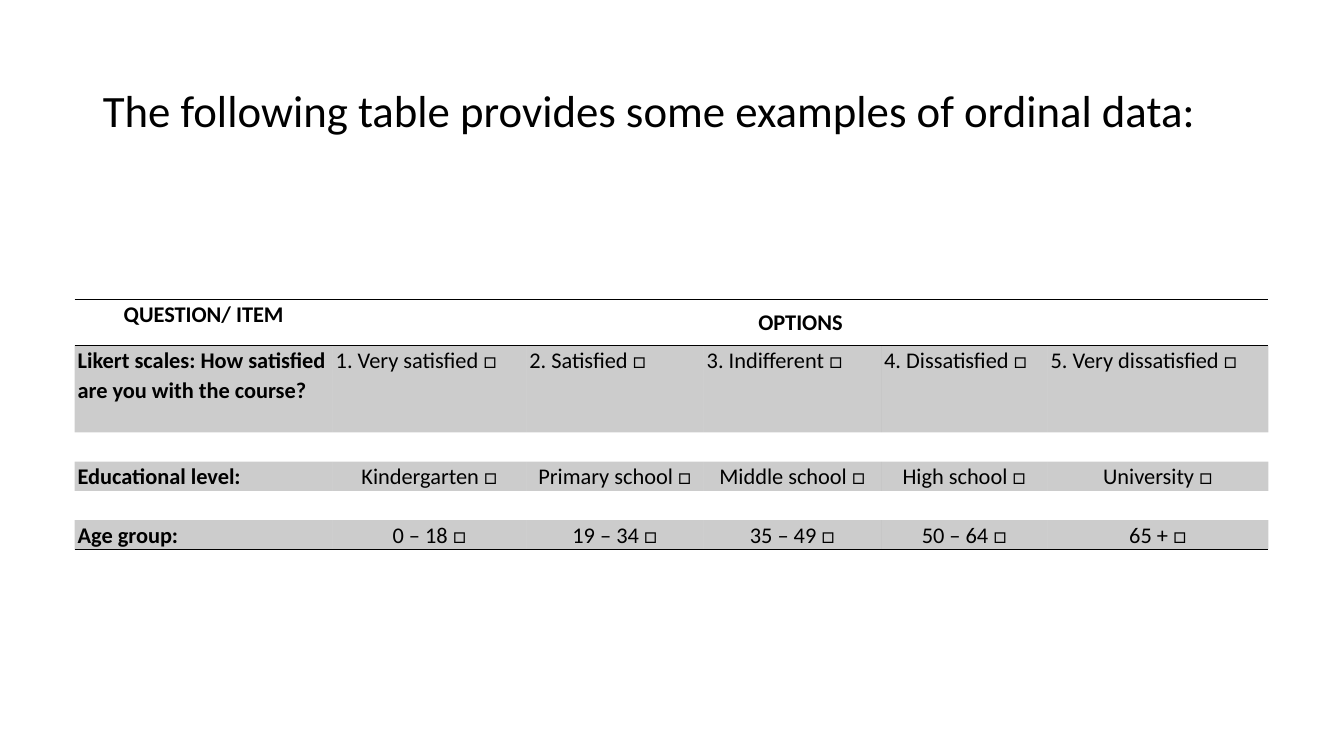
from dataclasses import dataclass

from lxml.etree import SubElement
from pptx import Presentation
from pptx.dml.color import RGBColor
from pptx.enum.text import MSO_ANCHOR, MSO_AUTO_SIZE, PP_ALIGN
from pptx.oxml.ns import qn
from pptx.util import Inches, Pt


@dataclass(frozen=True)
class Theme:
    font: str = "Calibri"
    ink: RGBColor = RGBColor(0, 0, 0)
    title_size: Pt = Pt(32)
    table_size: Pt = Pt(16)
    rule_width: Pt = Pt(1)
    shade_alpha: str = "20000"
    plain_table_style: str = "{2D5ABB26-0587-4C30-8999-92F81FD0307C}"


THEME = Theme()
COLUMN_WIDTHS = [2.56, 1.92, 1.76, 1.76, 1.65, 2.19]
ROW_HEIGHTS = [0.46, 0.86, 0.29, 0.29, 0.29, 0.29]
HEADER = ["QUESTION/ ITEM", "OPTIONS"]

# Table row number, option alignment, question and options
QUESTIONS = [
    (1, PP_ALIGN.LEFT, "Likert scales: How satisfied are you with the course?",
     ["1. Very satisfied □", "2. Satisfied □", "3. Indifferent □",
      "4. Dissatisfied □", "5. Very dissatisfied □"]),
    (3, PP_ALIGN.CENTER, "Educational level:",
     ["Kindergarten □", "Primary school □", "Middle school □",
      "High school □", "University □"]),
    (5, PP_ALIGN.CENTER, "Age group:",
     ["0 – 18 □", "19 – 34 □", "35 – 49 □", "50 – 64 □", "65 + □"]),
]


def style_paragraph(para, size, align, spacing, bold=False):
    para.alignment = align
    para.line_spacing = spacing
    para.font.name = THEME.font
    para.font.size = size
    para.font.bold = bold
    para.font.color.rgb = THEME.ink


def set_margins(cell, side, top):
    cell.margin_left = cell.margin_right = Inches(side)
    cell.margin_top = cell.margin_bottom = Inches(top)


def write_cell(cell, text, align, bold=False):
    cell.text = text
    style_paragraph(cell.text_frame.paragraphs[0], THEME.table_size, align, 1.07, bold)


def add_rules(cell, *edges):
    properties = cell._tc.get_or_add_tcPr()
    for edge in edges:
        line = SubElement(properties, qn(f"a:{edge}"), w=str(THEME.rule_width))
        fill = SubElement(line, qn("a:solidFill"))
        SubElement(fill, qn("a:srgbClr"), val=str(THEME.ink))


def shade_cell(cell):
    cell.fill.solid()
    cell.fill.fore_color.rgb = THEME.ink
    color = cell._tc.tcPr.find(f"{qn('a:solidFill')}/{qn('a:srgbClr')}")
    SubElement(color, qn("a:alpha"), val=THEME.shade_alpha)


def add_title(page, text):
    title = page.shapes.title
    title.left, title.top = Inches(0.92), Inches(0.4)
    title.width, title.height = Inches(11.5), Inches(1.45)
    frame = title.text_frame
    frame.text = text
    frame.auto_size = MSO_AUTO_SIZE.NONE
    frame.vertical_anchor = MSO_ANCHOR.MIDDLE
    style_paragraph(frame.paragraphs[0], THEME.title_size, PP_ALIGN.LEFT, 0.9)


def add_plain_table(page):
    frame = page.shapes.add_table(
        len(ROW_HEIGHTS), len(COLUMN_WIDTHS), Inches(0.74), Inches(2.97),
        Inches(sum(COLUMN_WIDTHS)), Inches(sum(ROW_HEIGHTS)))
    table = frame.table
    table.horz_banding = table.first_row = False
    table._tbl.tblPr.find(qn("a:tableStyleId")).text = THEME.plain_table_style
    for column, width in zip(table.columns, COLUMN_WIDTHS):
        column.width = Inches(width)
    for row, height in zip(table.rows, ROW_HEIGHTS):
        row.height = Inches(height)
    for cell in table.iter_cells():
        set_margins(cell, 0.03, 0)
    return table


def fill_header(table):
    for cell in table.rows[0].cells:
        add_rules(cell, "lnT", "lnB")
    options = table.cell(0, 1)
    options.merge(table.cell(0, len(COLUMN_WIDTHS) - 1))
    set_margins(options, 0.16, 0.08)
    for column, text in enumerate(HEADER):
        write_cell(table.cell(0, column), text, PP_ALIGN.CENTER, bold=True)


def fill_questions(table):
    for number, align, question, options in QUESTIONS:
        cells = list(table.rows[number].cells)
        write_cell(cells[0], question, PP_ALIGN.LEFT, bold=True)
        for cell, option in zip(cells[1:], options):
            write_cell(cell, option, align)
        for cell in cells:
            if number == len(ROW_HEIGHTS) - 1:
                add_rules(cell, "lnB")
            shade_cell(cell)


def size_spacer_rows(table):
    for number in (2, 4):
        for cell in table.rows[number].cells:
            para = cell.text_frame.paragraphs[0]
            SubElement(para._p, qn("a:endParaRPr"),
                       sz=str(int(THEME.table_size.pt * 100)))


def main():
    deck = Presentation()
    deck.slide_width, deck.slide_height = Inches(13.33), Inches(7.5)
    page = deck.slides.add_slide(deck.slide_layouts[5])

    # Heading
    add_title(page, "The following table provides some examples of ordinal data:")

    # Table of questions and answer options
    table = add_plain_table(page)
    fill_header(table)
    fill_questions(table)
    size_spacer_rows(table)

    deck.save("out.pptx")


if __name__ == "__main__":
    main()
